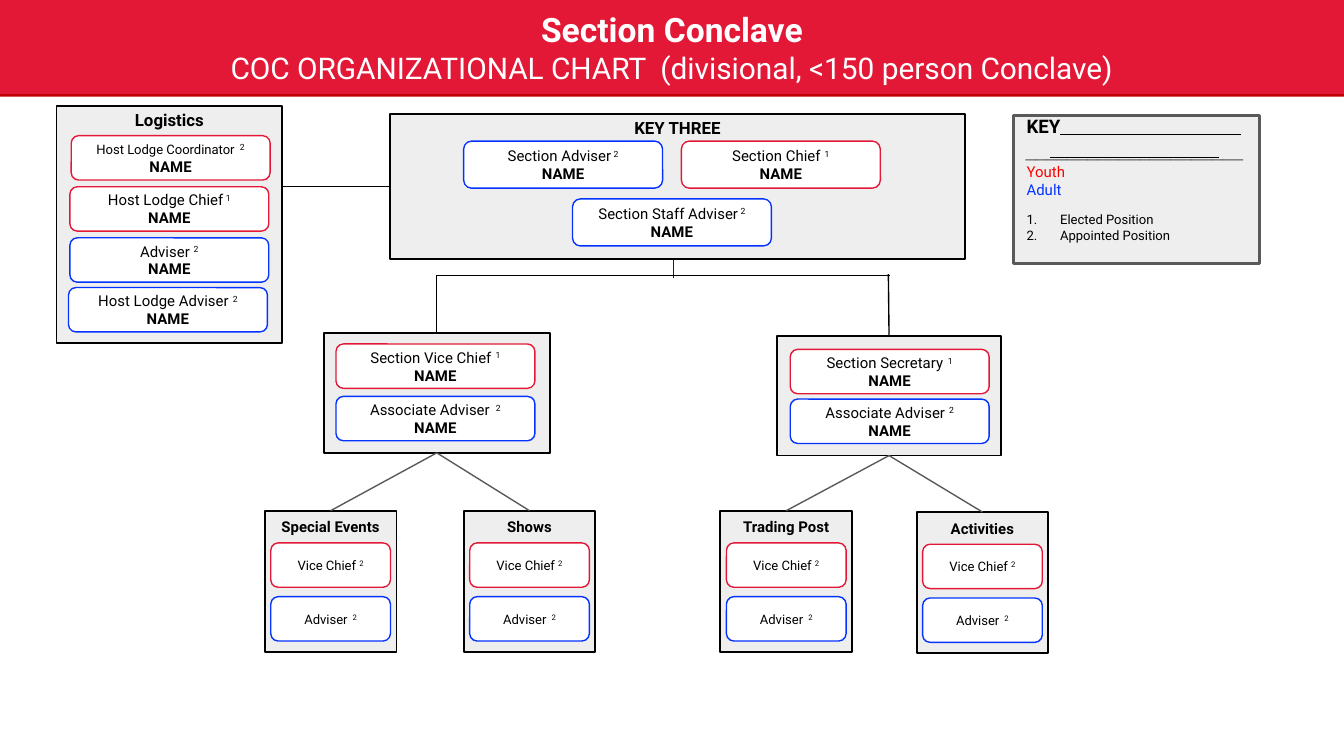
import pptx
import pptx.util
import pptx.dml.color
import pptx.enum.shapes
import pptx.enum.text
import pptx.oxml.ns
import lxml.etree

Inches, Pt = pptx.util.Inches, pptx.util.Pt
Shape = pptx.enum.shapes.MSO_SHAPE
Align = pptx.enum.text.PP_ALIGN
Anchor = pptx.enum.text.MSO_ANCHOR

theme = {
    "font": "Roboto", "rule font": "Arial",
    "red": "E31837", "dark": "C00000", "youth": "FF0000", "adult": "0432FF",
    "panel": "EEEEEE", "white": "FFFFFF", "black": "000000",
    "grey": "595959", "stem": "202020",
    "title": 18, "sub": 16, "key": 10, "head": 9, "body": 8, "small": 7,
    "thin": 0.75, "edge": 1, "bold edge": 1.5,
}

banner = [("Section Conclave", "title", True),
          ("COC ORGANIZATIONAL CHART  (divisional, <150 person Conclave)", "sub", False)]

panels = {
    "key three": ("KEY THREE", (2.9, 0.85, 4.28, 1.08), [
        (5.07, 1.05, 0.35, "red", "Section Chief ", "1", "body"),
        (3.45, 1.05, 0.35, "adult", "Section Adviser", " 2", "body"),
        (4.26, 1.48, 0.35, "adult", "Section Staff Adviser", " 2", "body")]),
    "secretary": ("", (5.78, 2.5, 1.67, 0.89), [
        (5.88, 2.6, 0.33, "red", "Section Secretary", "  1", "body"),
        (5.88, 2.97, 0.33, "adult", "Associate Adviser ", "2", "body")]),
    "logistics": ("Logistics", (0.42, 0.79, 1.68, 1.76), [
        (0.53, 1.01, 0.33, "red", "Host Lodge Coordinator ", " 2", "small"),
        (0.52, 1.39, 0.33, "red", "Host Lodge Chief", " 1", "body"),
        (0.52, 1.77, 0.33, "adult", "Adviser ", "2", "body"),
        (0.51, 2.14, 0.33, "adult", "Host Lodge Adviser ", "2", "body")]),
    "vice": ("", (2.41, 2.48, 1.68, 0.89), [
        (2.5, 2.56, 0.33, "red", "Section Vice Chief ", "1", "body"),
        (2.5, 2.95, 0.33, "adult", "Associate Adviser ", " 2", "body")]),
}

units = [("Trading Post", 5.36, 3.8, "secretary"), ("Activities", 6.82, 3.81, "secretary"),
         ("Special Events", 1.97, 3.8, "vice"), ("Shows", 3.45, 3.8, "vice")]
staff = [("red", "Vice Chief ", "2"), ("adult", "Adviser ", " 2")]

legend = [("Youth", "youth", "body"), ("Adult", "adult", "body"),
          ("Elected Position", "black", "small"), ("Appointed Position", "black", "small")]
rules = [(7.89, 9.23, 1.0), (7.81, 9.07, 1.17)]

deck = pptx.Presentation()
deck.slide_width = Inches(10)
deck.slide_height = deck.slide_width * 9 // 16
slide = deck.slides.add_slide(deck.slide_layouts[6])


def color(name):
    return pptx.dml.color.RGBColor.from_string(theme[name])


def apply(item, **values):
    for name, value in values.items():
        setattr(item, name, value)


def frame(shape, anchor=Anchor.MIDDLE):
    text = shape.text_frame
    gap = Inches(0.1)
    apply(text, word_wrap=True, vertical_anchor=anchor, margin_left=gap,
          margin_right=gap, margin_top=gap, margin_bottom=gap)
    return text


def write(para, words, size, tint="black", bold=False, face="font", align=Align.CENTER):
    para.alignment = align
    run = para.add_run()
    run.text = words
    apply(run.font, name=theme[face], size=Pt(theme[size]), bold=bold)
    run.font.color.rgb = color(tint)
    return run


def block(home, place, fill, edge=None, width="edge", kind=Shape.RECTANGLE):
    shape = home.add_shape(kind, *map(Inches, place))
    shape.shadow.inherit = False
    shape.fill.solid()
    shape.fill.fore_color.rgb = color(fill)
    if edge:
        shape.line.color.rgb = color(edge)
        shape.line.width = Pt(theme[width])
    else:
        shape.line.fill.background()
    return shape


def label(home, place, words, size, align=Align.CENTER):
    box = home.add_textbox(*map(Inches, place))
    write(frame(box).paragraphs[0], words, size, bold=True, align=align)


def card(home, place, edge, role, mark, size, named=True):
    text = frame(block(home, place, "white", edge, "thin", Shape.ROUNDED_RECTANGLE))
    para = text.paragraphs[0]
    write(para, role, size)
    note = write(para, mark, "body" if named else size)
    note._r.get_or_add_rPr().set("baseline", "30000")
    if named:
        write(text.add_paragraph(), "NAME", "body", bold=True)


def link(start, end, tint="black", tail=None, tip=None):
    line = slide.shapes.add_connector(pptx.enum.shapes.MSO_CONNECTOR.STRAIGHT,
                                      *map(Inches, start + end))
    line.line.color.rgb = color(tint)
    line.line.width = Pt(theme["thin"])
    lxml.etree.SubElement(line._element.spPr, pptx.oxml.ns.qn("a:effectLst"))
    if tail:
        line.begin_connect(*tail)
    if tip:
        line.end_connect(*tip)


def number(para):
    props = para._p.get_or_add_pPr()
    props.set("marL", str(Inches(0.25)))
    props.set("indent", str(-Inches(0.25)))
    mark = lxml.etree.SubElement(props, pptx.oxml.ns.qn("a:buAutoNum"))
    mark.set("type", "arabicPeriod")


art = slide.shapes
link((5.01, 2.07), (5.01, 1.53), "stem")
block(art, (0, 0, 10, 0.72), "dark")
text = frame(block(art, (0, 0, 10, 0.7), "red"))
for row, (words, size, bold) in enumerate(banner):
    para = text.add_paragraph() if row else text.paragraphs[0]
    write(para, words, size, "white", bold)

text = frame(block(art, (7.54, 0.86, 1.83, 1.1), "panel", "grey", "bold edge"), Anchor.TOP)
para = text.paragraphs[0]
para.line_spacing = 1.5
write(para, "_" * 21, "key", bold=True, face="rule font", align=Align.LEFT).font.italic = True
for row, (words, tint, size) in enumerate(legend):
    para = text.add_paragraph()
    write(para, words, size, tint, align=Align.LEFT)
    if size == "small":
        if row == 2:
            para.space_before = Pt(7)
        number(para)
label(art, (7.54, 0.87, 1.82, 0.14), "KEY", "key", Align.LEFT)
for left, right, top in rules:
    link((left, top), (right, top))

boxes = {}
for name, (head, place, cards) in panels.items():
    boxes[name] = block(art, place, "panel", "black")
    left, top, width, height = place
    if head:
        label(art, (left, top - 0.02, width, 0.24), head, "head")
    for x, y, tall, edge, role, mark, size in cards:
        card(art, (x, y, 1.48, tall), edge, role, mark, size)

link((2.9, 1.39), (2.09, 1.39), tail=(boxes["key three"], 1))
link((6.62, 2.05), (3.25, 2.05))
link((3.25, 2.05), (3.25, 2.48), tip=(boxes["vice"], 0))
link((6.61, 2.04), (6.62, 2.5), tip=(boxes["secretary"], 0))

for head, left, top, boss in units:
    group = art.add_group_shape().shapes
    box = block(group, (left, top, 0.98, 1.05), "panel", "black")
    label(group, (left, top, 0.98, 0.24), head, "body")
    for row, (edge, role, mark) in enumerate(staff):
        spot = (left + 0.045, top + 0.24 + 0.4 * row, 0.89, 0.33)
        card(group, spot, edge, role, mark, "small", False)
    link((0, 0), (1, 1), "grey", (boxes[boss], 2), (box, 0))

deck.save("out.pptx")
